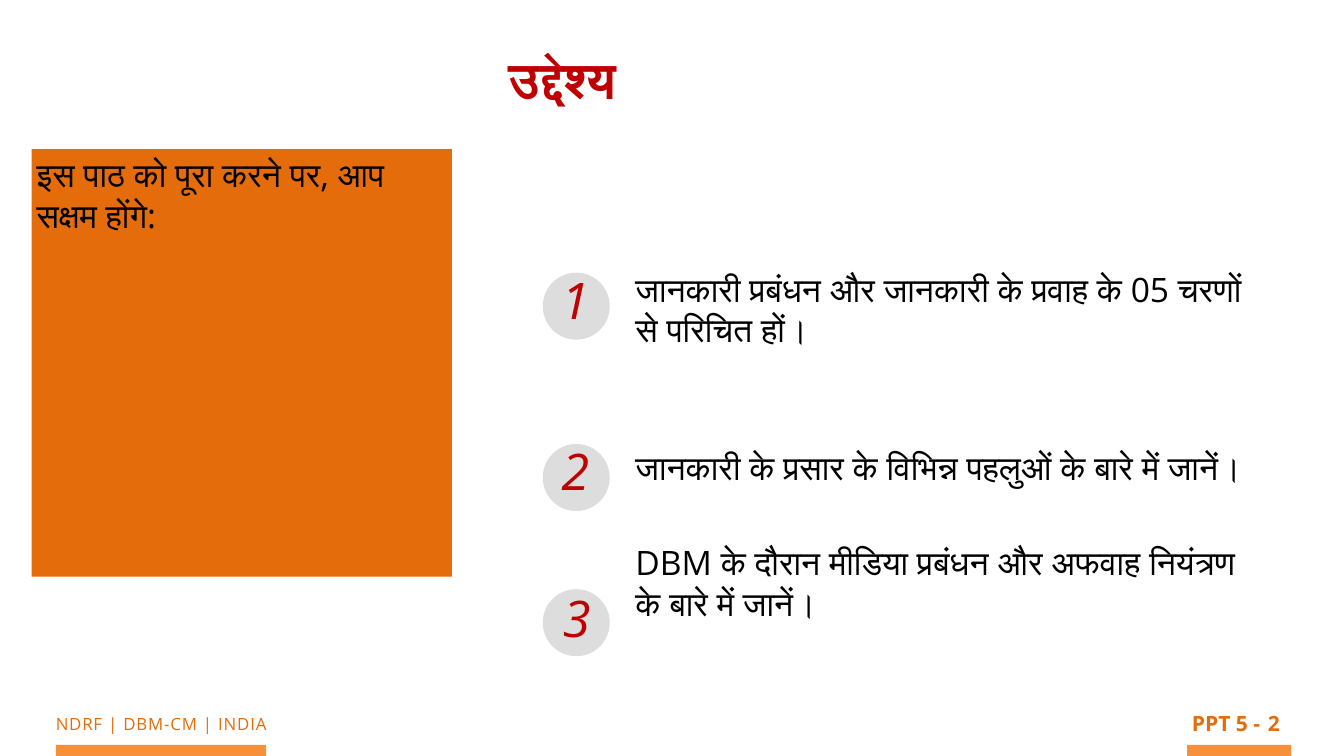
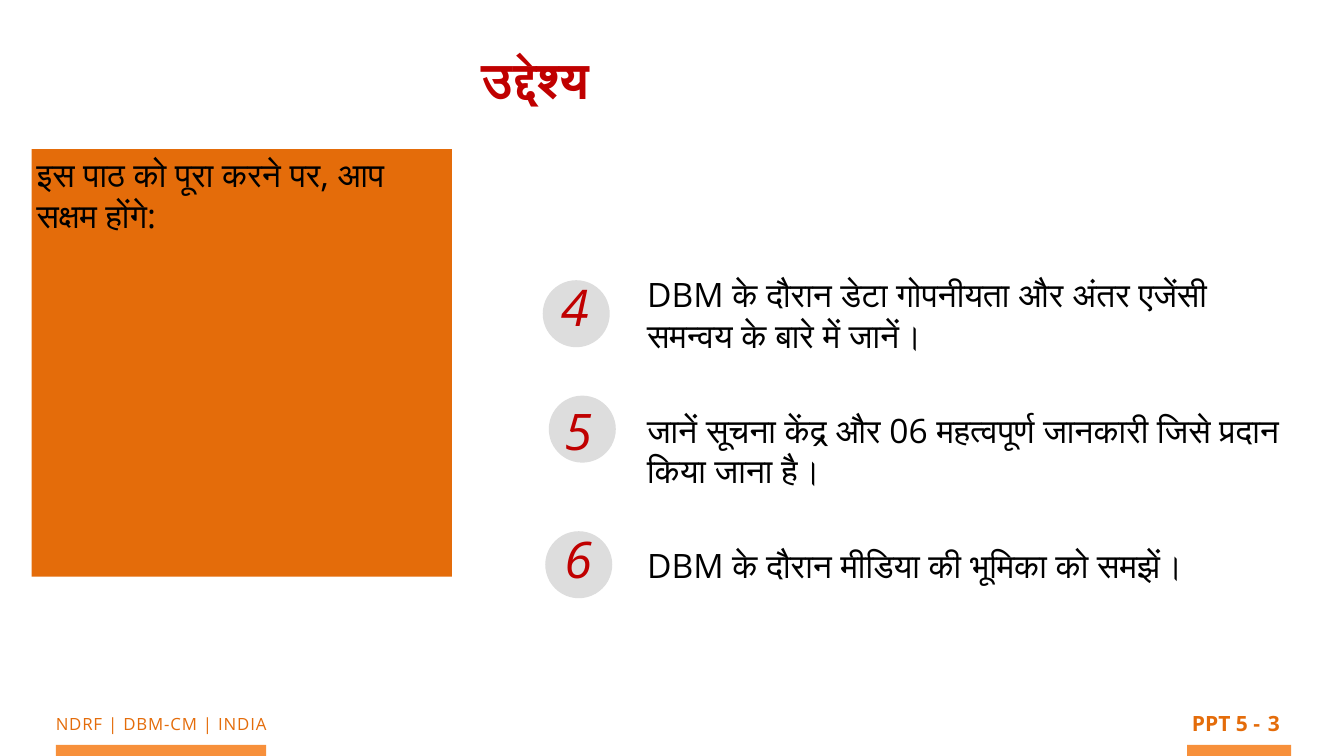
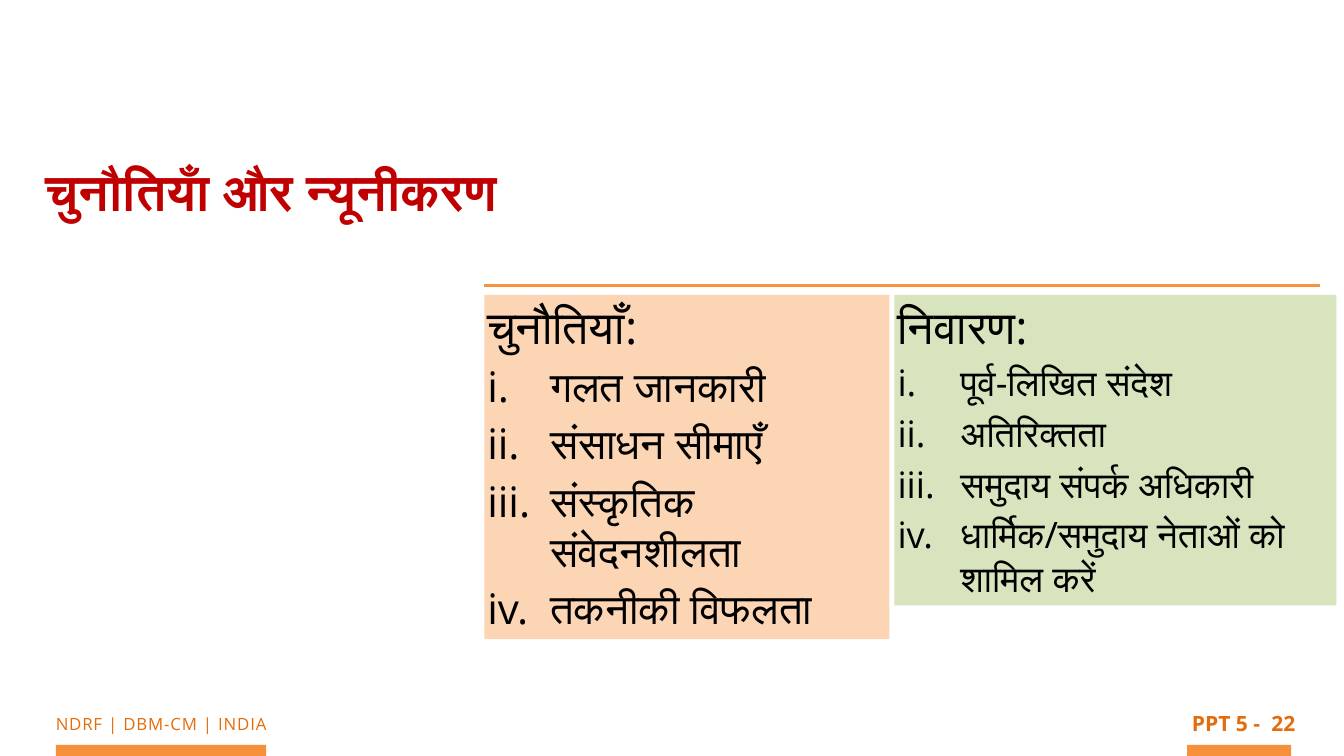
from lxml import etree
from pptx import Presentation
from pptx.dml.color import RGBColor
from pptx.enum.shapes import MSO_CONNECTOR, MSO_SHAPE
from pptx.enum.text import MSO_ANCHOR, MSO_AUTO_SIZE, PP_ALIGN
from pptx.oxml.ns import qn
from pptx.util import Inches, Pt

LEFT, CENTER = PP_ALIGN.LEFT, PP_ALIGN.CENTER
TOP = MSO_ANCHOR.TOP
NO_AUTOFIT = MSO_AUTO_SIZE.NONE
RECTANGLE, OVAL = MSO_SHAPE.RECTANGLE, MSO_SHAPE.OVAL
STRAIGHT = MSO_CONNECTOR.STRAIGHT

COLUMNS, ROWS = 26.67, 15
CELL = Inches(1)
TITLE_AND_BODY, TWO_BODIES = 1, 3
FONT = "Open Sans"
COLORS = {
    "text": "000000",
    "accent": "E46C0A",
    "bar": "F7903B",
    "rule": "F69240",
    "heading": "C00000",
    "circle": "DDDDDD",
    "challenges": "FCD5B5",
    "solutions": "D7E4BD",
}
CIRCLE_SIZE = 1.33
OBJECTIVE_INTRO = "इस पाठ को पूरा करने पर, आप सक्षम होंगे:"


def color(name):
    return RGBColor.from_string(COLORS[name])


def place(shape, box):
    """Move a shape to (column, row, columns wide, rows high)."""
    shape.left, shape.top, shape.width, shape.height = grid(*box)


def grid(*cells):
    return [round(cell * CELL) for cell in cells]


def prepare_frame(shape, inset=0.09, wrap=True):
    frame = shape.text_frame
    frame.auto_size = NO_AUTOFIT
    frame.word_wrap = wrap
    frame.vertical_anchor = TOP
    frame.margin_left = frame.margin_right = Inches(inset)
    frame.margin_top = frame.margin_bottom = Inches(inset)
    return frame


def style(paragraph, size, color_name="text", bold=False, italic=False,
          align=LEFT, before=0, indent=0, hanging=0, bullet=None, tracking=None):
    paragraph.alignment = align
    paragraph.space_before = Pt(before)
    properties = paragraph._p.get_or_add_pPr()
    properties.set("marL", str(Inches(indent)))
    properties.set("indent", str(-Inches(hanging)))
    if bullet:
        etree.SubElement(properties, qn("a:buFont"), typeface=FONT)
        etree.SubElement(properties, qn("a:buAutoNum"), type=bullet)
    else:
        etree.SubElement(properties, qn("a:buNone"))
    font = paragraph.font
    font.size, font.bold, font.italic = Pt(size), bold, italic
    font.color.rgb = color(color_name)
    font.name = FONT
    defaults = properties.find(qn("a:defRPr"))
    etree.SubElement(defaults, qn("a:cs"), typeface=FONT)
    if tracking:
        defaults.set("spc", str(tracking))


def add_label(slide, box, text, size, color_name, wrap=True, **options):
    label = slide.shapes.add_textbox(*grid(*box))
    paragraph = prepare_frame(label, wrap=wrap).paragraphs[0]
    paragraph.text = text
    style(paragraph, size, color_name, **options)


def add_block(slide, kind, box, fill):
    block = slide.shapes.add_shape(kind, *grid(*box))
    block.shadow.inherit = False
    block.fill.solid()
    block.fill.fore_color.rgb = color(fill)
    block.line.fill.background()
    return block


def set_title(slide, text, box, indent=0):
    title = slide.shapes.title
    place(title, box)
    paragraph = prepare_frame(title).paragraphs[0]
    paragraph.text = text
    style(paragraph, 72, "heading", bold=True, indent=indent)


def add_footer(slide, number):
    add_label(slide, (0.66, 14.08, 5.08, 0.58), "NDRF | DBM-CM | INDIA", 24,
              "accent", align=CENTER, tracking=120)
    add_label(slide, (23.56, 14.01, 1.54, 0.68), "PPT 5 -", 30, "accent",
              wrap=False, bold=True, align=CENTER)
    number_width = 0.42 if number < 10 else 0.79
    add_label(slide, (25.07, 14.01, number_width, 0.74), str(number), 30,
              "accent", bold=True, align=CENTER)
    for left, width in ((1.11, 4.17), (23.56, 2.06)):
        add_block(slide, RECTANGLE, (left, ROWS - 0.22, width, 0.22), "bar")


def add_numbered_circle(slide, number, circle, digit):
    """Draw a circle and its number, each given by its top left corner."""
    add_block(slide, OVAL, (*circle, CIRCLE_SIZE, CIRCLE_SIZE), "circle")
    add_label(slide, (*digit, 0.9, 1.84), str(number), 72, "heading", italic=True)


def add_objectives_slide(presentation, number, title_box, title_indent,
                         body_box, objectives, circles):
    """Objectives are (text, space before); circles are numbered badges."""
    slide = presentation.slides.add_slide(presentation.slide_layouts[TITLE_AND_BODY])
    add_footer(slide, number)
    panel = add_block(slide, RECTANGLE, (0.63, 2.96, 8.34, 8.48), "accent")
    intro = prepare_frame(panel, inset=0.1).paragraphs[0]
    intro.text = OBJECTIVE_INTRO
    style(intro, 48)
    set_title(slide, "उद्देश्य", title_box, title_indent)

    body = slide.placeholders[1]
    place(body, body_box)
    frame = prepare_frame(body)
    frame.text = "\n".join(text for text, _ in objectives)
    for paragraph, (_, before) in zip(frame.paragraphs, objectives):
        style(paragraph, 48, before=before)
    for circle in circles:
        add_numbered_circle(slide, *circle)


def fill_list_panel(panel, box, fill, heading, items, item_size):
    place(panel, box)
    panel.fill.solid()
    panel.fill.fore_color.rgb = color(fill)
    frame = prepare_frame(panel, inset=0.06)
    frame.text = "\n".join([heading, *items])
    first, *rest = frame.paragraphs
    style(first, 66)
    for paragraph in rest:
        style(paragraph, item_size, before=10, indent=1.25, hanging=1.25,
              bullet="romanLcPeriod")


def add_challenges_slide(presentation, number):
    slide = presentation.slides.add_slide(presentation.slide_layouts[TWO_BODIES])
    add_footer(slide, number)
    set_title(slide, "चुनौतियाँ और न्यूनीकरण", (0.81, 3.08, 9.51, 2.6))
    fill_list_panel(
        slide.placeholders[1], (9.61, 5.85, 8.04, 6.83), "challenges", "चुनौतियाँ:",
        ["गलत जानकारी", "संसाधन सीमाएँ", "संस्कृतिक संवेदनशीलता", "तकनीकी विफलता"], 60)
    fill_list_panel(
        slide.placeholders[2], (17.75, 5.85, 8.77, 6.16), "solutions", "निवारण:",
        ["पूर्व-लिखित संदेश", "अतिरिक्तता", "समुदाय संपर्क अधिकारी",
         "धार्मिक/समुदाय नेताओं को शामिल करें"], 52)
    rule = slide.shapes.add_connector(STRAIGHT, *grid(9.61, 5.67, 26.19, 5.67))
    rule.line.color.rgb = color("rule")
    rule.line.width = Pt(4.5)
    etree.SubElement(rule._element.spPr, qn("a:effectLst"))


def main():
    presentation = Presentation()
    presentation.slide_width, presentation.slide_height = grid(COLUMNS, ROWS)
    add_objectives_slide(
        presentation, 2, (9.47, 0.86, 3.86, 1.38), 0.54, (12.52, 5.24, 12.54, 8.14),
        [("जानकारी प्रबंधन और जानकारी के प्रवाह के 05 चरणों से परिचित हों।", 0),
         ("जानकारी के प्रसार के विभिन्न पहलुओं के बारे में जानें।", 140),
         ("DBM के दौरान मीडिया प्रबंधन और अफवाह नियंत्रण के बारे में जानें।", 78)],
        [(1, (10.77, 5.41), (11.05, 5.24)),
         (2, (10.77, 8.81), (11.05, 8.65)),
         (3, (10.77, 11.69), (11.08, 11.55))])
    add_objectives_slide(
        presentation, 3, (9.47, 0.86, 3.07, 1.38), 0, (12.75, 5.35, 12.77, 6.39),
        [("DBM के दौरान डेटा गोपनीयता और अंतर एजेंसी समन्वय के बारे में जानें।", 0),
         ("जानें सूचना केंद्र और 06 महत्वपूर्ण जानकारी जिसे प्रदान किया जाना है।", 78),
         ("DBM के दौरान मीडिया की भूमिका को समझें।", 78)],
        [(4, (10.77, 5.56), (11.04, 5.39)),
         (5, (10.89, 7.85), (11.11, 7.84)),
         (6, (10.82, 10.54), (11.11, 10.39))])
    add_challenges_slide(presentation, 22)
    presentation.save("out.pptx")


if __name__ == "__main__":
    main()
